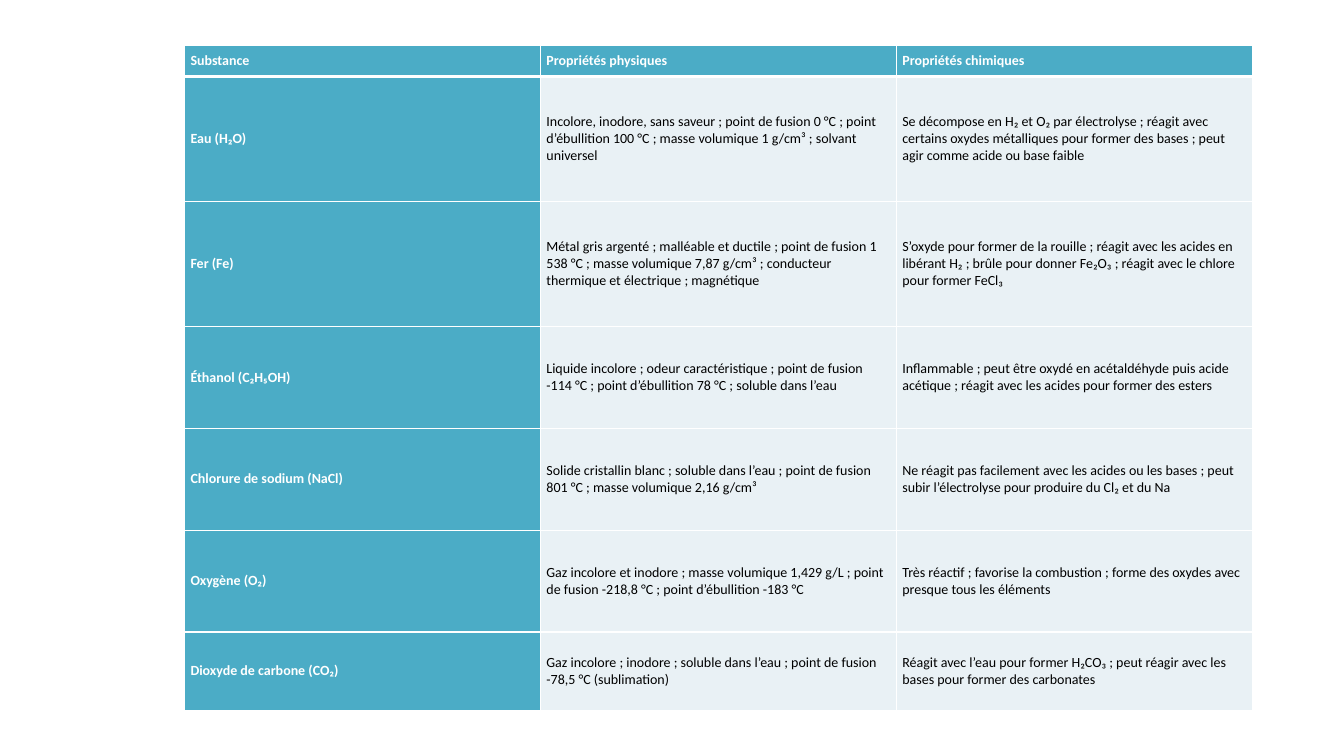
"""Build a slide with a table of physical and chemical properties of substances."""
from dataclasses import dataclass

from lxml import etree
from pptx import Presentation
from pptx import util as u
from pptx.dml.color import RGBColor
from pptx.enum import text as t
from pptx.oxml.ns import qn

PX = u.Inches(1) // 100


@dataclass(frozen=True)
class Theme:
    font: str = "Calibri"
    size: int = 10
    accent: str = "4BACC6"
    pale: str = "E9F1F5"
    dark: str = "000000"
    light: str = "FFFFFF"
    thin: int = 1
    thick: int = 3


theme = Theme()


def write_text(cell, content, *, color, bold):
    cell.vertical_anchor = t.MSO_ANCHOR.MIDDLE
    cell.margin_left = cell.margin_right = 6 * PX
    cell.margin_top = cell.margin_bottom = 3 * PX
    span = cell.text_frame.paragraphs[0].add_run()
    span.text = content
    span.font.name = theme.font
    span.font.size = u.Pt(theme.size)
    span.font.bold = bold
    span.font.color.rgb = RGBColor.from_string(color)


def draw_borders(cell, **widths):
    properties = cell._tc.get_or_add_tcPr()
    for side, width in widths.items():
        line = etree.SubElement(properties, qn(f"a:ln{side}"), w=str(u.Pt(width)))
        fill = etree.SubElement(line, qn("a:solidFill"))
        etree.SubElement(fill, qn("a:srgbClr"), val=theme.light)


substances = [
    ("Substance", "Propriétés physiques", "Propriétés chimiques"),
    ("Eau (H₂O)",
     "Incolore, inodore, sans saveur ; point de fusion 0 °C ; point d’ébullition 100 °C ; "
     "masse volumique 1 g/cm³ ; solvant universel",
     "Se décompose en H₂ et O₂ par électrolyse ; réagit avec certains oxydes métalliques "
     "pour former des bases ; peut agir comme acide ou base faible"),
    ("Fer (Fe)",
     "Métal gris argenté ; malléable et ductile ; point de fusion 1 538 °C ; "
     "masse volumique 7,87 g/cm³ ; conducteur thermique et électrique ; magnétique",
     "S’oxyde pour former de la rouille ; réagit avec les acides en libérant H₂ ; "
     "brûle pour donner Fe₂O₃ ; réagit avec le chlore pour former FeCl₃"),
    ("Éthanol (C₂H₅OH)",
     "Liquide incolore ; odeur caractéristique ; point de fusion -114 °C ; "
     "point d’ébullition 78 °C ; soluble dans l’eau",
     "Inflammable ; peut être oxydé en acétaldéhyde puis acide acétique ; "
     "réagit avec les acides pour former des esters"),
    ("Chlorure de sodium (NaCl)",
     "Solide cristallin blanc ; soluble dans l’eau ; point de fusion 801 °C ; "
     "masse volumique 2,16 g/cm³",
     "Ne réagit pas facilement avec les acides ou les bases ; "
     "peut subir l’électrolyse pour produire du Cl₂ et du Na"),
    ("Oxygène (O₂)",
     "Gaz incolore et inodore ; masse volumique 1,429 g/L ; point de fusion -218,8 °C ; "
     "point d’ébullition -183 °C",
     "Très réactif ; favorise la combustion ; forme des oxydes avec presque tous les éléments"),
    ("Dioxyde de carbone (CO₂)",
     "Gaz incolore ; inodore ; soluble dans l’eau ; point de fusion -78,5 °C (sublimation)",
     "Réagit avec l’eau pour former H₂CO₃ ; peut réagir avec les bases "
     "pour former des carbonates"),
]
row_heights = [31, 124, 124, 101, 101, 101, 78]
column_width = 353

deck = Presentation()
deck.slide_width, deck.slide_height = 1333 * PX, 750 * PX
page = deck.slides.add_slide(deck.slide_layouts[6])
table = page.shapes.add_table(
    len(substances), 3, 183 * PX, 45 * PX, 3 * column_width * PX, sum(row_heights) * PX
).table
table.first_col = True
table.horz_banding = False

for column in table.columns:
    column.width = column_width * PX

for row_index, (entry, height) in enumerate(zip(substances, row_heights)):
    table.rows[row_index].height = height * PX
    for column_index, content in enumerate(entry):
        cell = table.cell(row_index, column_index)
        heading = row_index == 0 or column_index == 0
        write_text(cell, content, color=theme.light if heading else theme.dark, bold=heading)
        draw_borders(
            cell, L=theme.thin, R=theme.thin,
            T=theme.thick if row_index == 1 else theme.thin,
            B=theme.thick if row_index == 0 else theme.thin,
        )
        cell.fill.solid()
        cell.fill.fore_color.rgb = RGBColor.from_string(theme.accent if heading else theme.pale)

deck.save("out.pptx")
